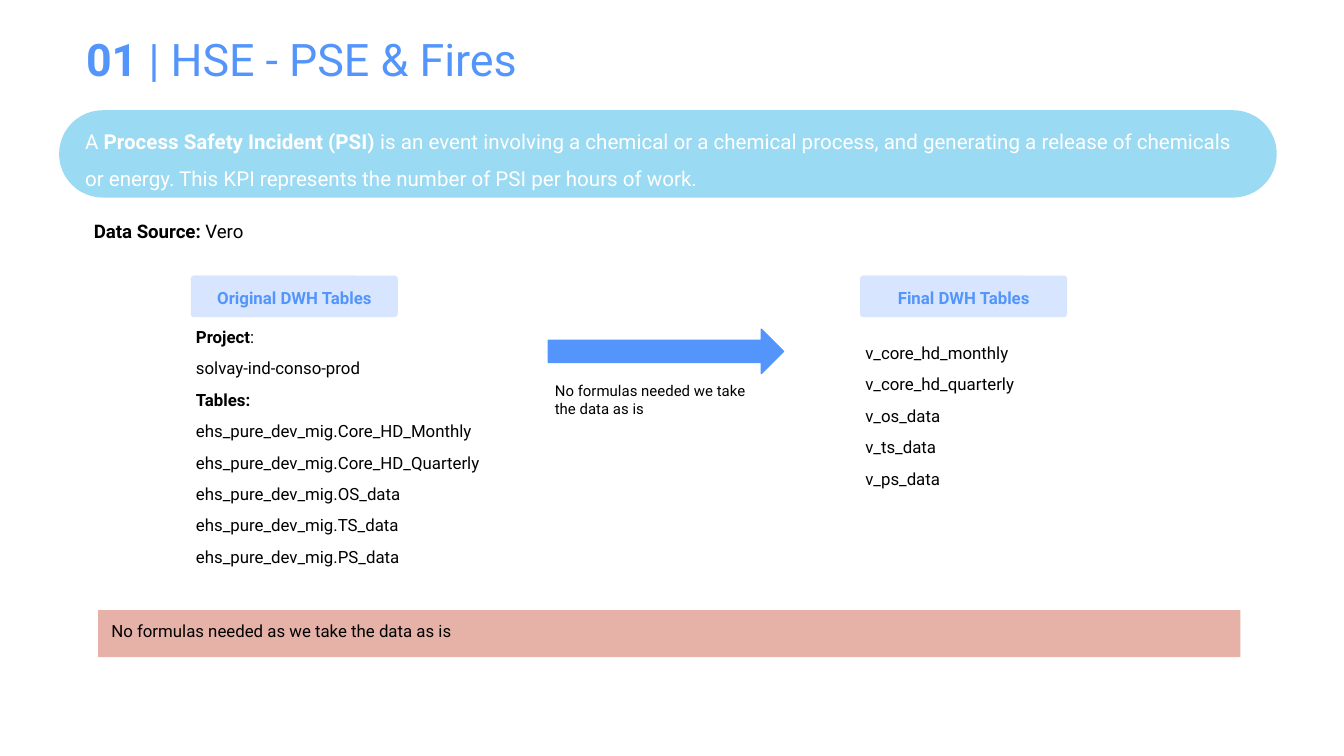
from dataclasses import dataclass

from lxml.etree import SubElement
from pptx import Presentation
from pptx.dml.color import RGBColor
from pptx.enum.shapes import MSO_SHAPE
from pptx.enum.text import MSO_ANCHOR, MSO_AUTO_SIZE, PP_ALIGN
from pptx.oxml.ns import qn
from pptx.util import Inches, Pt


@dataclass(frozen=True)
class Theme:
    """Colours, font and type sizes of the slide."""

    font: str = "Roboto"
    blue: RGBColor = RGBColor(0x54, 0x95, 0xFC)
    sky: RGBColor = RGBColor(0x81, 0xD1, 0xF0)
    salmon: RGBColor = RGBColor(0xE6, 0xB2, 0xA8)
    white: RGBColor = RGBColor(0xFF, 0xFF, 0xFF)
    black: RGBColor = RGBColor(0, 0, 0)
    title: int = 24
    definition: int = 11
    source: int = 10
    body: int = 9
    caption: int = 8


THEME = Theme()

SOURCE_TABLES = [
    "*Project*:",
    "solvay-ind-conso-prod",
    "*Tables:*",
    "ehs_pure_dev_mig.Core_HD_Monthly",
    "ehs_pure_dev_mig.Core_HD_Quarterly",
    "ehs_pure_dev_mig.OS_data",
    "ehs_pure_dev_mig.TS_data",
    "ehs_pure_dev_mig.PS_data",
]
FINAL_TABLES = [
    "v_core_hd_monthly",
    "v_core_hd_quarterly",
    "v_os_data",
    "v_ts_data",
    "v_ps_data",
]


def write_text(shape, lines, size, color=THEME.black, anchor=MSO_ANCHOR.TOP,
               align=PP_ALIGN.LEFT, line_spacing=1.0, inset=0.1,
               auto_size=MSO_AUTO_SIZE.NONE):
    """Write one paragraph per line, with bold between asterisks."""
    frame = shape.text_frame
    frame.word_wrap = True
    frame.auto_size = auto_size
    frame.vertical_anchor = anchor
    frame.margin_left = frame.margin_right = Inches(0.1)
    frame.margin_top = frame.margin_bottom = Inches(inset)
    for index, line in enumerate(lines):
        paragraph = frame.add_paragraph() if index else frame.paragraphs[0]
        paragraph.alignment = align
        paragraph.line_spacing = line_spacing
        paragraph.space_before = Pt(6 if index else 0)
        paragraph.font.name = THEME.font
        paragraph.font.size = Pt(size)
        paragraph.font.color.rgb = color
        for position, text in enumerate(line.split("*")):
            if text:
                run = paragraph.add_run()
                run.text = text
                run.font.bold = position % 2 == 1


def add_title(slide, text):
    """Place and fill the title placeholder."""
    title = slide.shapes.title
    title.left, title.top = Inches(0.54), Inches(0.11)
    title.width, title.height = Inches(9.04), Inches(0.65)
    write_text(title, [text], THEME.title, THEME.blue, MSO_ANCHOR.MIDDLE)


def add_text(slide, left, top, width, height, lines, size=THEME.body):
    """Add a text box that grows with its text."""
    box = slide.shapes.add_textbox(
        Inches(left), Inches(top), Inches(width), Inches(height))
    write_text(box, lines, size, auto_size=MSO_AUTO_SIZE.SHAPE_TO_FIT_TEXT)


def add_block(slide, kind, left, top, width, height, color, opacity=100):
    """Add a flat filled shape without outline."""
    shape = slide.shapes.add_shape(
        kind, Inches(left), Inches(top), Inches(width), Inches(height))
    shape.shadow.inherit = False
    shape.fill.solid()
    shape.fill.fore_color.rgb = color
    shape.line.fill.background()
    if opacity < 100:
        fill_color = shape.fill._xPr.find(qn("a:solidFill"))[0]
        SubElement(fill_color, qn("a:alpha")).set("val", str(opacity * 1000))
    return shape


def add_definition(slide, text):
    """Add the pill with the definition of the indicator."""
    pill = add_block(slide, MSO_SHAPE.ROUNDED_RECTANGLE,
                     0.44, 0.82, 9.06, 0.65, THEME.sky, 80)
    pill.adjustments[0] = 0.5
    write_text(pill, [text], THEME.definition, THEME.white,
               MSO_ANCHOR.MIDDLE, line_spacing=1.5, inset=0.05)


def add_heading(slide, left, text):
    """Add the heading of a table list."""
    heading = add_block(slide, MSO_SHAPE.ROUNDED_RECTANGLE,
                        left, 2.05, 1.54, 0.31, THEME.blue, 23)
    heading.adjustments[0] = 0.08
    write_text(heading, [f"*{text}*"], THEME.body, THEME.blue,
               MSO_ANCHOR.MIDDLE, PP_ALIGN.CENTER, 1.15)


def add_arrow(slide):
    """Add the block arrow from source to final tables."""
    arrow = add_block(slide, MSO_SHAPE.RIGHT_ARROW,
                      4.08, 2.45, 1.75, 0.33, THEME.blue)
    arrow.line.color.rgb = THEME.blue
    arrow.line.width = Pt(0.75)


def add_note(slide, text):
    """Add the note bar at the foot."""
    bar = add_block(slide, MSO_SHAPE.RECTANGLE,
                    0.73, 4.54, 8.5, 0.35, THEME.salmon)
    write_text(bar, [text], THEME.body,
               auto_size=MSO_AUTO_SIZE.SHAPE_TO_FIT_TEXT)


def main():
    """Build and save the slide."""
    presentation = Presentation()
    presentation.slide_width = Inches(10)
    presentation.slide_height = presentation.slide_width * 9 // 16
    slide = presentation.slides.add_slide(presentation.slide_layouts[5])

    add_title(slide, "*01 *| HSE - PSE & Fires")
    add_definition(
        slide,
        "A *Process Safety Incident (PSI)* is an event involving a chemical or "
        "a chemical process, and generating a release of chemicals or energy. "
        "This KPI represents the number of PSI per hours of work.")
    add_text(slide, 6.34, 2.45, 2.65, 1.3, FINAL_TABLES)
    add_heading(slide, 6.4, "Final DWH Tables")
    add_heading(slide, 1.42, "Original DWH Tables")
    add_text(slide, 1.36, 2.33, 2.4, 2, SOURCE_TABLES)
    add_arrow(slide)
    add_text(slide, 4.03, 2.74, 1.75, 0.47,
             ["No formulas needed we take the data as is"], THEME.caption)
    add_text(slide, 0.6, 1.55, 1.84, 0.37,
             ["*Data Source: *Vero"], THEME.source)
    add_note(slide, "No formulas needed as we take the data as is")

    presentation.save("out.pptx")


if __name__ == "__main__":
    main()
